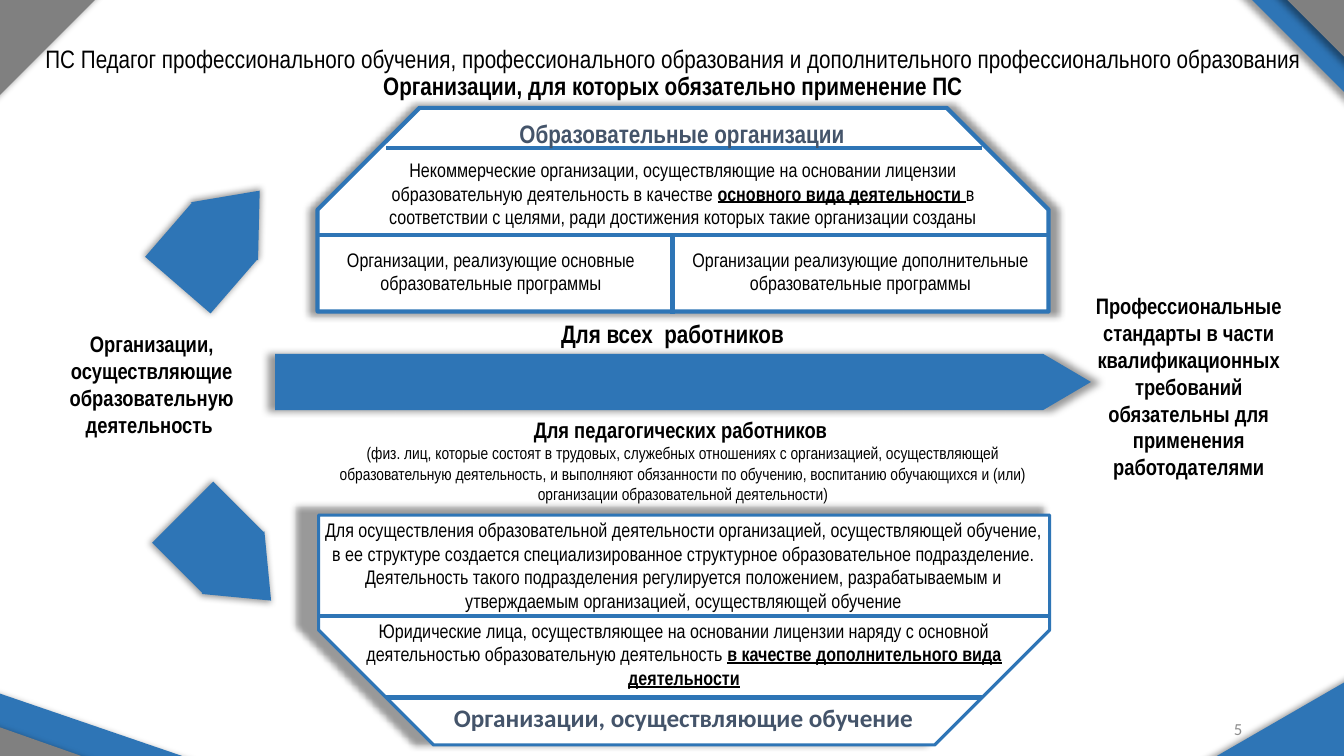
"""Builds the slide on organisations that must apply the professional standard."""
from lxml import etree
from pptx import Presentation
from pptx.dml.color import RGBColor as RGB
from pptx.enum.shapes import MSO_CONNECTOR as Link, MSO_SHAPE as Shape
from pptx.enum.text import MSO_ANCHOR as Anchor, MSO_AUTO_SIZE as Fit, PP_ALIGN as Align
from pptx.oxml.ns import qn
from pptx.util import Inches, Pt

THEME = {
    "blue": RGB(0x2E, 0x75, 0xB6), "gray": RGB(0x80, 0x80, 0x80),
    "white": RGB(0xFF, 0xFF, 0xFF), "black": RGB(0, 0, 0),
    "slate": RGB(0x44, 0x54, 0x6A), "muted": RGB(0x8C, 0x8C, 0x8C),
    "title": 18, "label": 16, "body": 14, "note": 12,
    "font": "Arial Narrow", "alt_font": "Calibri", "rule": 3,
}
BOLD = {"bold": True}
KEY = {"bold": True, "underline": True}

CORNERS = [
    ((10.66, -0.89, 6.06, 1.79), 45, "blue"),
    ((-1.72, 7.45, 6.62, 0.84), 18.9, "blue"),
    ((-0.67, -0.22, 1.78, 0.78), 315, "gray"),
    ((11.94, 7.13, 1.83, 1.09), 330, "blue"),
    ((10.61, -0.26, 6.62, 1.17), 45, "gray"),
    ((-2.15, 7.66, 6.62, 1.17), 19.4, "gray"),
]
PANELS = [((3.15, 1.07, 7.25, 2.02), 0, 3), ((3.16, 5.11, 7.25, 2.28), 180, 2.25)]
ARROWS = [
    (Shape.PENTAGON, (2.73, 3.51, 8.09, 0.56), 0, [0.85]),
    (Shape.RIGHT_ARROW, (1.55, 1.92, 1.24, 0.88), 310.9, [0.975, 0.606]),
    (Shape.RIGHT_ARROW, (1.63, 5.08, 1.24, 0.88), 45, [0.975, 0.606]),
]
LEFT, RIGHT, INNER_LEFT, INNER_RIGHT = 3.15, 10.4, 3.83, 9.74
RULES = [
    (INNER_LEFT, 1.47, INNER_RIGHT, 1.47),
    (LEFT, 2.33, RIGHT, 2.33),
    (6.67, 2.33, 6.67, 3.12),
    (LEFT, 6.11, RIGHT, 6.11),
    (INNER_LEFT, 6.92, INNER_RIGHT, 6.92),
]
TEXTS = [
    ((0.22, 0.49, 12.91, 0.49), {"anchor": Anchor.MIDDLE, "spacing": 0.9, "fit": Fit.NONE}, [
        ("title", [("ПС Педагог профессионального обучения, профессионального образования "
                    "и дополнительного профессионального образования", {})]),
        ("title", [("Организации, для которых обязательно применение ПС", BOLD)])]),
    ((0.36, 3.23, 2.29, 1.18), {}, [
        ("label", [("Организации, осуществляющие образовательную деятельность ", BOLD)])]),
    ((10.55, 2.85, 2.48, 1.99), {}, [
        ("label", [("Профессиональные стандарты в части квалификационных требований "
                    "обязательны для применения работодателями", BOLD)])]),
    ((5.03, 1.12, 3.47, 0.4), {"wrap": False, "color": "slate"}, [
        ("title", [("Образовательные организации", BOLD)])]),
    ((3.61, 1.52, 6.33, 0.81), {}, [
        ("body", [("Некоммерческие организации, осуществляющие на основании лицензии "
                   "образовательную деятельность в качестве ", {}),
                  ("основного вида деятельности ", KEY),
                  ("в соответствии с целями, ради достижения которых такие организации созданы", {})])]),
    ((3.23, 2.41, 3.28, 0.57), {}, [
        ("body", [("Организации, реализующие основные образовательные программы", {})])]),
    ((6.75, 2.41, 3.57, 0.57), {}, [
        ("body", [("Организации реализующие дополнительные образовательные программы", {})])]),
    ((5.44, 3.11, 2.46, 0.4), {"wrap": False}, [
        ("title", [("Для всех  работников", BOLD)])]),
    ((3.15, 4.08, 7.25, 0.98), {}, [
        ("label", [("Для педагогических работников ", BOLD)]),
        ("note", [("(физ. лиц, которые состоят в трудовых, служебных отношениях с организацией, "
                   "осуществляющей образовательную деятельность, и выполняют обязанности по обучению, "
                   "воспитанию обучающихся и (или) организации образовательной деятельности)", {})])]),
    ((3.12, 5.09, 7.32, 1.04), {}, [
        ("body", [("Для осуществления образовательной деятельности организацией, осуществляющей "
                   "обучение, в ее структуре создается специализированное структурное образовательное "
                   "подразделение. Деятельность такого подразделения регулируется положением, "
                   "разрабатываемым и утверждаемым организацией, осуществляющей обучение", {})])]),
    ((3.45, 6.09, 6.67, 0.81), {}, [
        ("body", [("Юридические лица, осуществляющее на основании лицензии наряду с основной "
                   "деятельностью образовательную деятельность ", {}),
                  ("в качестве дополнительного вида деятельности", KEY)])]),
    ((4.4, 6.92, 4.76, 0.4), {"wrap": False, "color": "slate", "font": "alt_font"}, [
        ("title", [("Организации, осуществляющие обучение", BOLD)])]),
    ((9.42, 7.03, 3, 0.4), {"anchor": Anchor.MIDDLE, "align": Align.RIGHT, "color": "muted",
                            "font": "alt_font", "fit": Fit.NONE}, [("note", [("5", {})])]),
]


def add_shadow(shape):
    """Gives the shape a soft, slightly enlarged shadow."""
    shape.shadow.inherit = False
    effects = shape._element.spPr.find(qn("a:effectLst"))
    outer = etree.SubElement(effects, qn("a:outerShdw"), blurRad=str(Pt(5)), sx="102000",
                             sy="102000", algn="ctr", rotWithShape="0")
    color = etree.SubElement(outer, qn("a:prstClr"), val="black")
    etree.SubElement(color, qn("a:alpha"), val="40000")


def add_block(slide, kind, box, turn, fill, adjust=(), outline=0):
    """Adds a filled shape with a shadow."""
    block = slide.shapes.add_shape(kind, *map(Inches, box))
    block.rotation = turn
    for index, value in enumerate(adjust):
        block.adjustments[index] = value
    block.fill.solid()
    block.fill.fore_color.rgb = THEME[fill]
    if outline:
        block.line.color.rgb = THEME["blue"]
        block.line.width = Pt(outline)
    else:
        block.line.fill.background()
    add_shadow(block)


def add_rule(slide, ends):
    """Adds a plain blue line."""
    rule = slide.shapes.add_connector(Link.STRAIGHT, *map(Inches, ends))
    rule.line.color.rgb = THEME["blue"]
    rule.line.width = Pt(THEME["rule"])
    etree.SubElement(rule._element.spPr, qn("a:effectLst"))


def add_text(slide, box, style, paragraphs):
    """Adds a text box made of paragraphs of formatted runs."""
    frame = slide.shapes.add_textbox(*map(Inches, box)).text_frame
    layout = {"word_wrap": style.get("wrap", True), "auto_size": style.get("fit", Fit.SHAPE_TO_FIT_TEXT),
              "vertical_anchor": style.get("anchor", Anchor.TOP)}
    for name, value in layout.items():
        setattr(frame, name, value)
    for index, (size, runs) in enumerate(paragraphs):
        line = frame.add_paragraph() if index else frame.paragraphs[0]
        line.alignment = style.get("align", Align.CENTER)
        line.line_spacing = style.get("spacing", 1.0)
        for words, emphasis in runs:
            run = line.add_run()
            run.text = words
            run.font.color.rgb = THEME[style.get("color", "black")]
            face = {"name": THEME[style.get("font", "font")], "size": Pt(THEME[size]), **emphasis}
            for name, value in face.items():
                setattr(run.font, name, value)


def main():
    """Draws every part and saves the deck."""
    deck = Presentation()
    deck.slide_width, deck.slide_height = Inches(13.33), Inches(7.5)
    slide = deck.slides.add_slide(deck.slide_layouts[6])
    for box, turn, fill in CORNERS:
        add_block(slide, Shape.RECTANGLE, box, turn, fill)
    for box, turn, outline in PANELS:
        add_block(slide, Shape.SNIP_2_SAME_RECTANGLE, box, turn, "white", (0.5, 0), outline)
    for kind, box, turn, adjust in ARROWS:
        add_block(slide, kind, box, turn, "blue", adjust)
    for ends in RULES:
        add_rule(slide, ends)
    for box, style, paragraphs in TEXTS:
        add_text(slide, box, style, paragraphs)
    deck.save("out.pptx")


if __name__ == "__main__":
    main()
